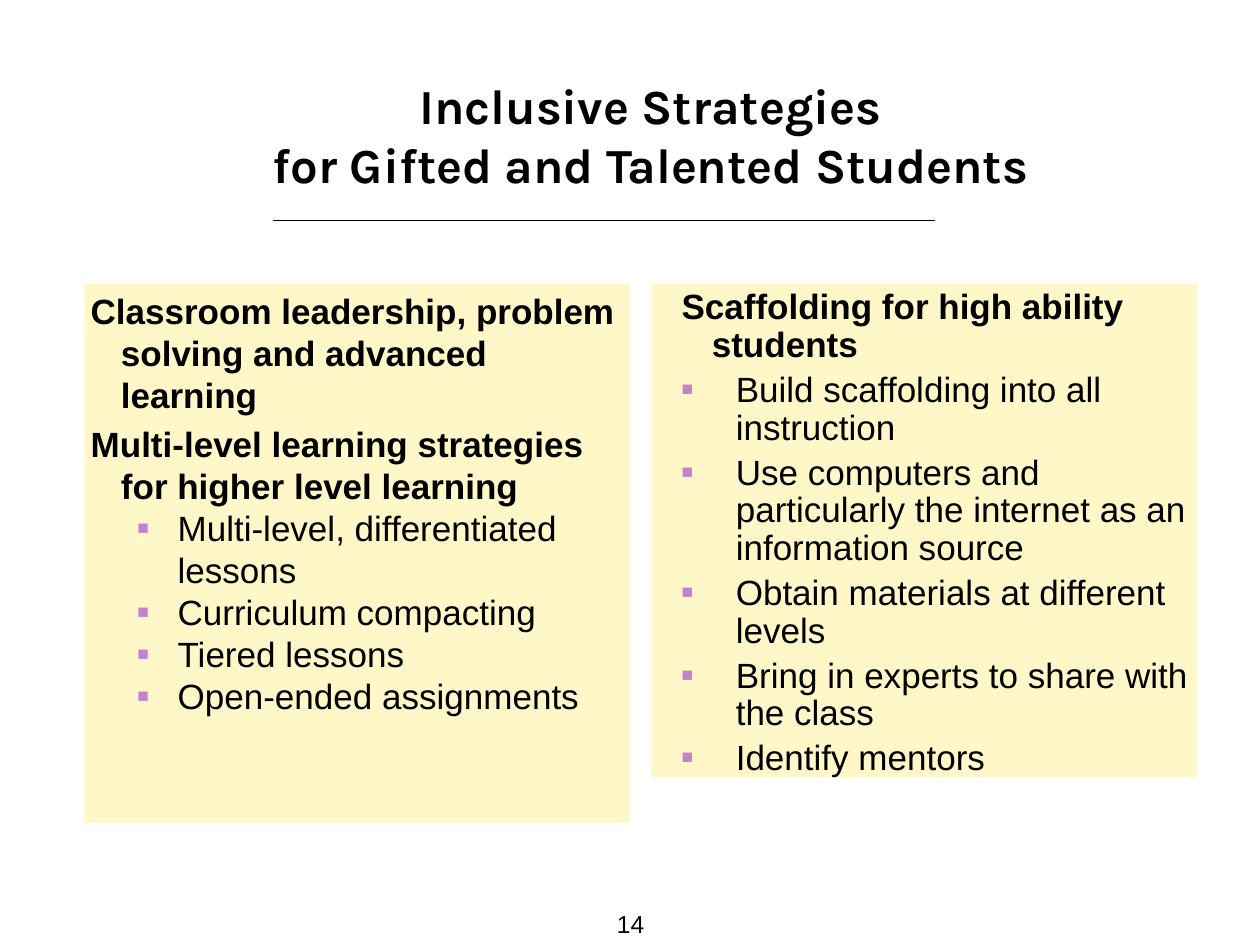
from lxml.etree import SubElement
from pptx import Presentation
from pptx.dml.color import RGBColor
from pptx.enum.shapes import MSO_CONNECTOR, MSO_SHAPE
from pptx.enum.text import MSO_ANCHOR, PP_ALIGN
from pptx.oxml.ns import qn
from pptx.util import Inches, Pt

# Content
TITLE = ["Inclusive Strategies ", "for Gifted and Talented Students "]
PAGE_NUMBER = "14"
LEFT = [
    ("heading", "Classroom leadership, problem solving and advanced learning"),
    ("heading", "Multi-level learning strategies for higher level learning"),
    ("bullet", "Multi-level, differentiated lessons"),
    ("bullet", "Curriculum compacting"),
    ("bullet", "Tiered lessons"),
    ("bullet", "Open-ended assignments"),
]
RIGHT = [
    ("heading", "Scaffolding for high ability students"),
    ("bullet", "Build scaffolding into all instruction"),
    ("bullet", "Use computers and particularly the internet as an information source"),
    ("bullet", "Obtain materials at different levels"),
    ("bullet", "Bring in experts to share with the class"),
    ("bullet", "Identify mentors"),
]

# Panel layout: margin and hanging indent in inches, space before in points
PANELS = [
    dict(items=LEFT, left=0.67, height=4.28, line_spacing=1.0,
         heading=(0.24, 0.24, 4), bullet=(0.69, 0.32, 0)),
    dict(items=RIGHT, left=5.17, height=3.92, line_spacing=0.9,
         heading=(0.43, 0.24, 4), bullet=(0.62, 0.43, 4)),
]
PANEL_TOP, PANEL_WIDTH = 2.25, 4.33

THEME = dict(
    text=RGBColor(0, 0, 0), panel=RGBColor(0xFF, 0xF7, 0xC8), bullet="C481CF",
    title_font="Karla", body_font="Arial",
    title_size=28, body_size=20, number_size=14,
)


def set_frame(box, anchor, wrap=True):
    frame = box.text_frame
    frame.word_wrap = wrap
    frame.vertical_anchor = anchor
    frame.margin_left = frame.margin_right = Inches(0.05)
    frame.margin_top = frame.margin_bottom = Inches(0.05)
    return frame


def add_span(para, text, font, size, bold=False):
    span = para.add_run()
    span.text = text
    span.font.name = THEME[font]
    span.font.size = Pt(THEME[size])
    span.font.bold = bold
    span.font.color.rgb = THEME["text"]


def set_indent(para, margin, hanging, bulleted):
    properties = para._p.get_or_add_pPr()
    properties.set("marL", str(Inches(margin)))
    properties.set("indent", str(-Inches(hanging)))
    if bulleted:
        color = SubElement(properties, qn("a:buClr"))
        SubElement(color, qn("a:srgbClr"), val=THEME["bullet"])
        SubElement(properties, qn("a:buSzPct"), val="55000")
        SubElement(properties, qn("a:buFont"), typeface=THEME["body_font"])
        SubElement(properties, qn("a:buChar"), char="■")
    else:
        SubElement(properties, qn("a:buNone"))


def add_panel(page, panel):
    box = page.shapes.add_shape(
        MSO_SHAPE.RECTANGLE, Inches(panel["left"]), Inches(PANEL_TOP),
        Inches(PANEL_WIDTH), Inches(panel["height"]))
    box.shadow.inherit = False
    box.fill.solid()
    box.fill.fore_color.rgb = THEME["panel"]
    box.line.fill.background()
    frame = set_frame(box, MSO_ANCHOR.TOP)
    for index, (kind, text) in enumerate(panel["items"]):
        para = frame.add_paragraph() if index else frame.paragraphs[0]
        margin, hanging, space = panel[kind]
        set_indent(para, margin, hanging, kind == "bullet")
        para.alignment = PP_ALIGN.LEFT
        para.line_spacing = panel["line_spacing"]
        para.space_before = Pt(space if index else 0)
        add_span(para, text, "body_font", "body_size", kind == "heading")


deck = Presentation()
deck.slide_width, deck.slide_height = Inches(10), Inches(7.5)
page = deck.slides.add_slide(deck.slide_layouts[6])

# Page number
number = page.shapes.add_textbox(Inches(4.84), Inches(7.16), Inches(0.33), Inches(0.34))
para = set_frame(number, MSO_ANCHOR.BOTTOM, wrap=False).paragraphs[0]
para.alignment = PP_ALIGN.CENTER
add_span(para, PAGE_NUMBER, "body_font", "number_size")

# Title
title = page.shapes.add_textbox(Inches(0.75), Inches(0.33), Inches(8.92), Inches(1.25))
para = set_frame(title, MSO_ANCHOR.BOTTOM).paragraphs[0]
para.alignment = PP_ALIGN.CENTER
for index, line in enumerate(TITLE):
    if index:
        para.add_line_break()
    add_span(para, line, "title_font", "title_size", bold=True)

# Text panels
for panel in PANELS:
    add_panel(page, panel)

# Rule under the title
rule = page.shapes.add_connector(
    MSO_CONNECTOR.STRAIGHT, Inches(2.17), Inches(1.75), Inches(7.42), Inches(1.75))
rule.line.color.rgb = THEME["text"]
rule.line.width = Pt(0.75)
SubElement(rule._element.spPr, qn("a:effectLst"))

deck.save("out.pptx")
